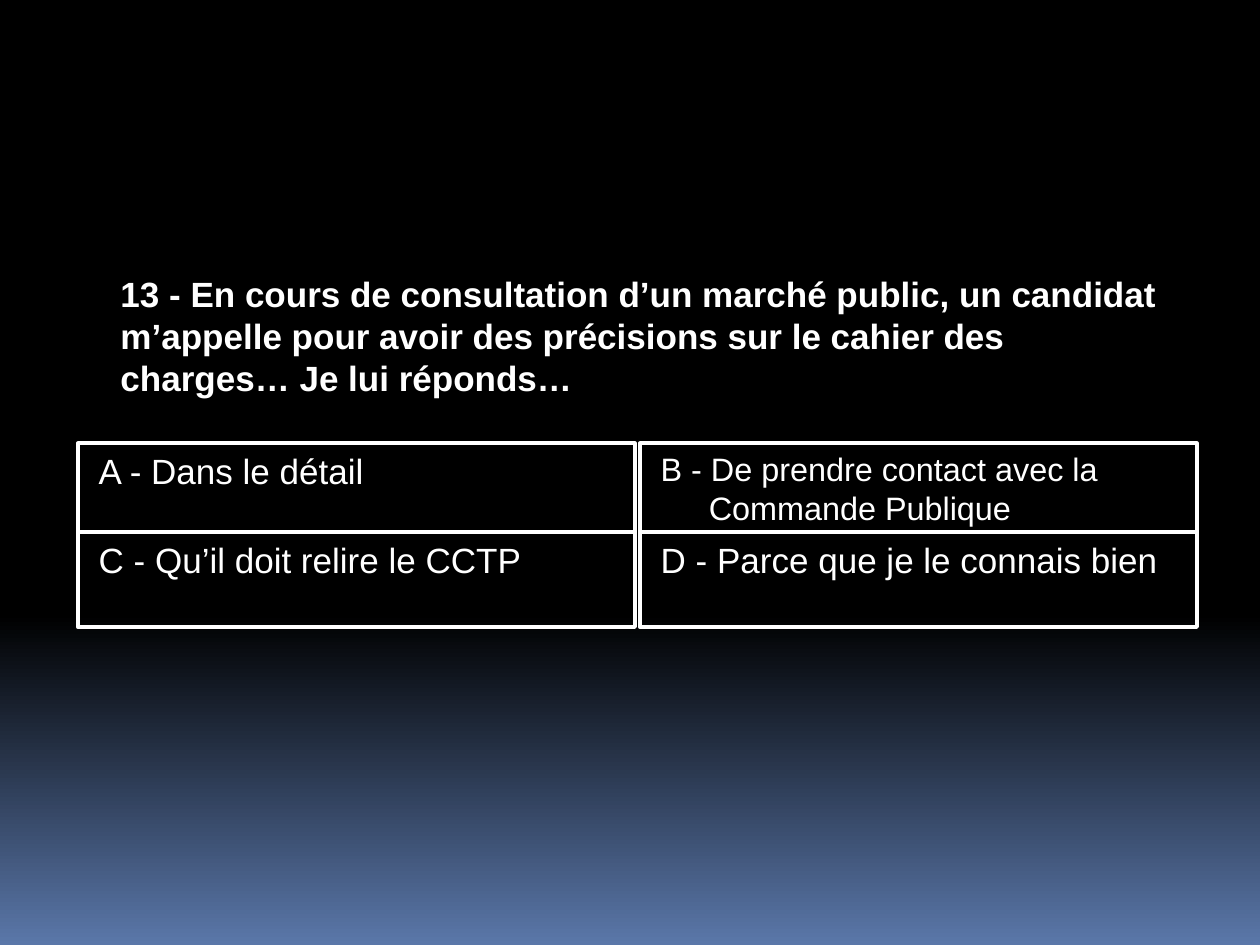
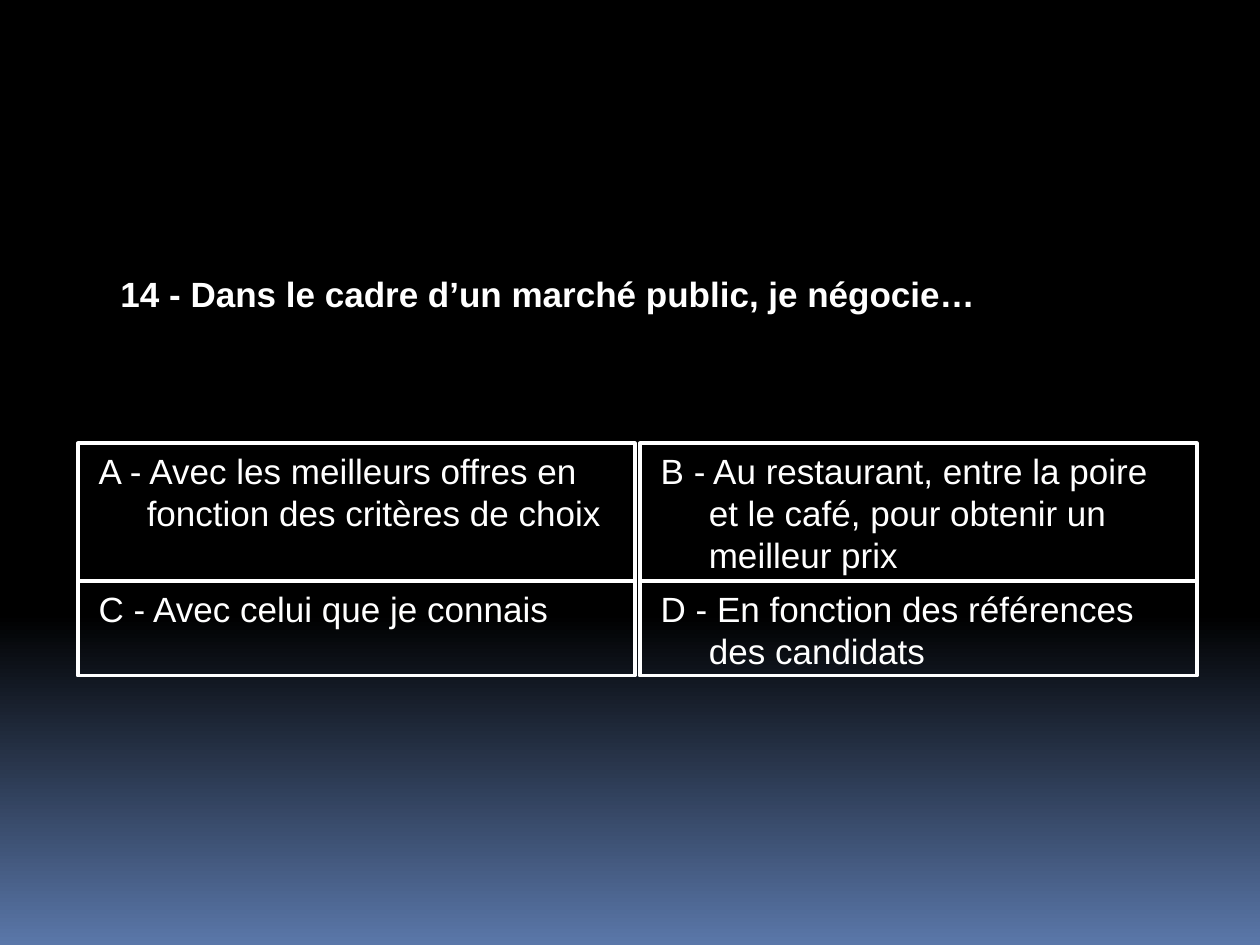
from copy import deepcopy

from pptx import Presentation
from pptx.dml.color import RGBColor
from pptx.enum.shapes import MSO_SHAPE
from pptx.enum.text import MSO_ANCHOR, PP_ALIGN
from pptx.util import Cm, Pt

RECTANGLE = MSO_SHAPE.RECTANGLE
TOP = MSO_ANCHOR.TOP
LEFT = PP_ALIGN.LEFT

COLORS = {"night": "000000", "horizon": "5A77A9", "white": "FFFFFF"}
FONT = "Arial"
TEXT_SIZE = 20
LINE_PITCH = 1.2

# Answer grid, in centimetres
GRID_LEFT, GRID_TOP = 1.57, 8.94
ANSWER_WIDTH, COLUMN_GAP = 11.23, 0.1
LAST_ROW_HEIGHT = 1.91

# Each question: text, height of the first answer row, answers with text size
QUESTIONS = [
    (
        "13 - En cours de consultation d’un marché public, un candidat "
        "m’appelle pour avoir des précisions sur le cahier des charges… "
        "Je lui réponds…",
        1.79,
        [
            ("A - Dans le détail", TEXT_SIZE),
            ("B - De prendre contact avec la Commande Publique", 18.5),
            ("C - Qu’il doit relire le CCTP", TEXT_SIZE),
            ("D - Parce que je le connais bien", TEXT_SIZE),
        ],
    ),
    (
        "14 - Dans le cadre d’un marché public, je négocie…",
        2.77,
        [
            ("A - Avec les meilleurs offres en fonction des critères de choix", TEXT_SIZE),
            ("B - Au restaurant, entre la poire et le café, pour obtenir un meilleur prix", TEXT_SIZE),
            ("C - Avec celui que je connais", TEXT_SIZE),
            ("D - En fonction des références des candidats", TEXT_SIZE),
        ],
    ),
]


def color(name):
    return RGBColor.from_string(COLORS[name])


def write(box, text, size, bold=False):
    frame = box.text_frame
    frame.text = text
    frame.word_wrap = True
    frame.vertical_anchor = TOP
    para = frame.paragraphs[0]
    para.alignment = LEFT
    para.line_spacing = Pt(size * LINE_PITCH)
    span = para.runs[0]
    span.font.name = FONT
    span.font.size = Pt(size)
    span.font.bold = bold
    span.font.color.rgb = color("white")
    return para


deck = Presentation()
deck.slide_width, deck.slide_height = Cm(25.4), Cm(19.05)

# Shared background: black down to 65 %, then fading to blue
fill = deck.slide_master.background.fill
fill.gradient()
fill.gradient_angle = 270
first_stop = fill.gradient_stops[0]._gs
first_stop.addnext(deepcopy(first_stop))
stops = [(0, "night"), (0.65, "night"), (1, "horizon")]
for stop, (position, name) in zip(fill.gradient_stops, stops):
    stop.position = position
    stop.color.rgb = color(name)

for question, first_row_height, answers in QUESTIONS:
    page = deck.slides.add_slide(deck.slide_layouts[6])

    # Question
    title = page.shapes.add_textbox(Cm(2.18), Cm(5.36), Cm(21.59), Cm(2.16))
    write(title, question, TEXT_SIZE, bold=True)

    # Answers in two rows of two
    for index, (answer, size) in enumerate(answers):
        row, column = divmod(index, 2)
        box = page.shapes.add_shape(
            RECTANGLE,
            Cm(GRID_LEFT + column * (ANSWER_WIDTH + COLUMN_GAP)),
            Cm(GRID_TOP + row * first_row_height),
            Cm(ANSWER_WIDTH),
            Cm(LAST_ROW_HEIGHT if row else first_row_height),
        )
        box.shadow.inherit = False
        box.fill.background()
        box.line.color.rgb = color("white")
        box.line.width = Pt(2.25)
        para = write(box, answer, size)

        # Hanging indent
        properties = para._p.get_or_add_pPr()
        properties.set("marL", str(Cm(1.14)))
        properties.set("indent", str(-Cm(0.97)))

deck.save("out.pptx")
